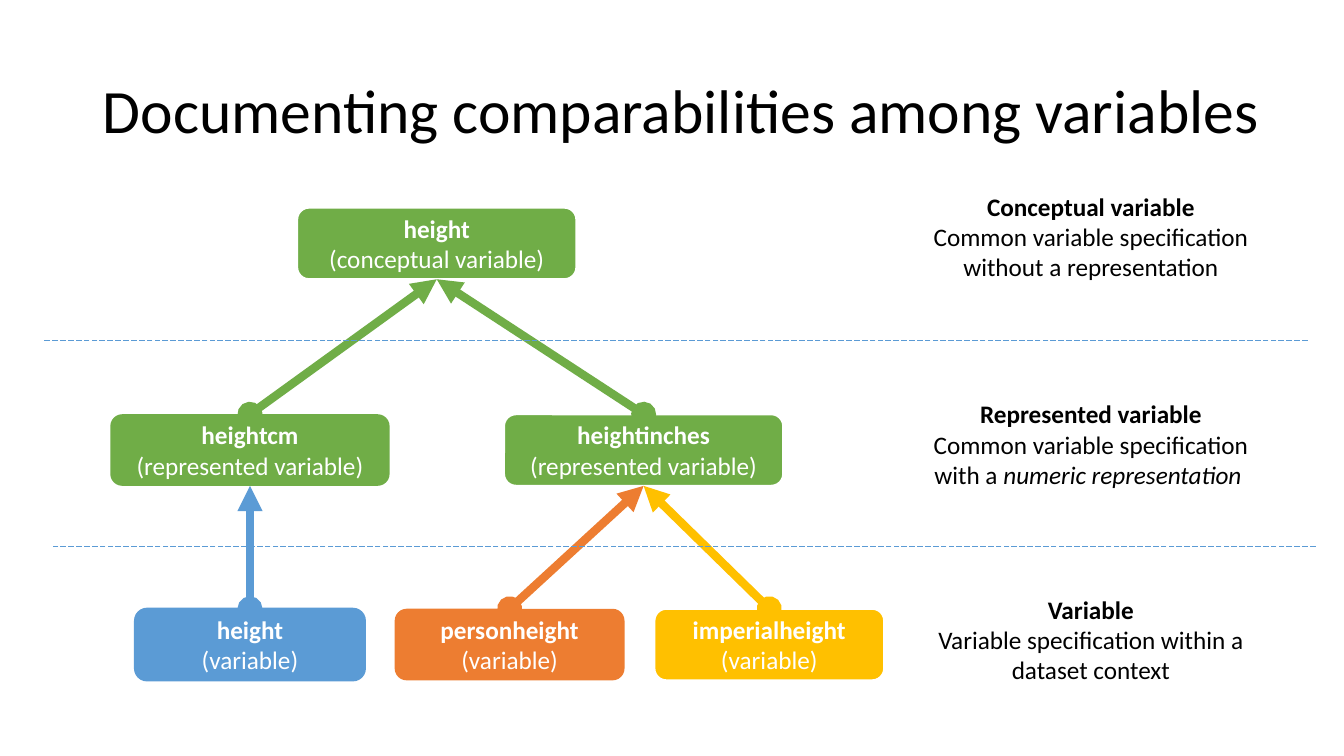
from lxml import etree
from pptx import Presentation
from pptx.dml.color import RGBColor
from pptx.enum.dml import MSO_LINE
from pptx.enum.shapes import MSO_CONNECTOR, MSO_SHAPE
from pptx.enum.text import MSO_ANCHOR, PP_ALIGN
from pptx.oxml.ns import qn
from pptx.util import Inches, Pt

STRAIGHT = MSO_CONNECTOR.STRAIGHT
ROUNDED = MSO_SHAPE.ROUNDED_RECTANGLE
LONG_DASH = MSO_LINE.LONG_DASH
MIDDLE = MSO_ANCHOR.MIDDLE
LEFT, CENTER = PP_ALIGN.LEFT, PP_ALIGN.CENTER

GREEN, BLUE, ORANGE, YELLOW = "70AD47", "5B9BD5", "ED7D31", "FFC000"
WHITE, BLACK = "FFFFFF", "000000"
BOX_HEIGHT = 9.47
WIDE, NARROW = 20.78, 17.1
CONCEPT_TOP, REPRESENTED_TOP, VARIABLE_TOP = 27.47, 54.8, 80.53
FIRST_CENTER, VARIABLE_STEP = 18.6, 19.32


def rgb(code):
    return RGBColor.from_string(code)


class VariableDiagram:
    """Draws on one slide, with lengths in hundredths of the slide's size."""

    font = "Calibri"
    text_size = 18
    title_size = 44

    def __init__(self, deck):
        self.deck = deck
        self.slide = deck.slides.add_slide(deck.slide_layouts[5])

    def x(self, share):
        return round(self.deck.slide_width * share / 100)

    def y(self, share):
        return round(self.deck.slide_height * share / 100)

    def area(self, left, top, width, height):
        return self.x(left), self.y(top), self.x(width), self.y(height)

    def add_run(self, paragraph, words, color, size, bold=False, italic=False):
        run = paragraph.add_run()
        run.text = words
        run.font.name = self.font
        run.font.size = Pt(size)
        run.font.bold = bold
        run.font.italic = italic
        run.font.color.rgb = rgb(color)

    def title(self, words, left, top, width, height):
        heading = self.slide.shapes.title
        heading.left, heading.top, heading.width, heading.height = self.area(left, top, width, height)
        frame = heading.text_frame
        frame.word_wrap = True
        frame.vertical_anchor = MIDDLE
        paragraph = frame.paragraphs[0]
        paragraph.alignment = LEFT
        paragraph.line_spacing = 0.9
        self.add_run(paragraph, words, BLACK, self.title_size)

    def box(self, name, role, center, top, width, color, outline=None):
        """Draws a variable and returns its top and bottom anchor points."""
        node = self.slide.shapes.add_shape(
            ROUNDED, *self.area(center - width / 2, top, width, BOX_HEIGHT))
        node.shadow.inherit = False
        node.fill.solid()
        node.fill.fore_color.rgb = rgb(color)
        if outline:
            node.line.color.rgb = rgb(outline)
            node.line.width = Pt(1.5)
        else:
            node.line.fill.background()
        frame = node.text_frame
        frame.word_wrap = True
        frame.vertical_anchor = MIDDLE
        paragraph = frame.paragraphs[0]
        paragraph.alignment = CENTER
        self.add_run(paragraph, name, WHITE, self.text_size, bold=True)
        paragraph.add_line_break()
        self.add_run(paragraph, f"({role})", WHITE, self.text_size)
        return (center, top), (center, top + BOX_HEIGHT)

    def line(self, start, end, color, width):
        link = self.slide.shapes.add_connector(
            STRAIGHT, self.x(start[0]), self.y(start[1]), self.x(end[0]), self.y(end[1]))
        link.line.color.rgb = rgb(color)
        link.line.width = Pt(width)
        etree.SubElement(link._element.spPr, qn("a:effectLst"))
        return link

    def arrow(self, start, end, color):
        link = self.line(start, end, color, 6)
        stroke = link._element.spPr.find(qn("a:ln"))
        for tag, kind in (("a:headEnd", "oval"), ("a:tailEnd", "triangle")):
            etree.SubElement(stroke, qn(tag)).set("type", kind)

    def divider(self, left, right, height):
        self.line((right, height), (left, height), BLUE, 0.5).line.dash_style = LONG_DASH

    def caption(self, term, meaning, top, emphasis=""):
        note = self.slide.shapes.add_textbox(*self.area(68.19, top, 25.96, 16.13))
        frame = note.text_frame
        frame.word_wrap = True
        frame.vertical_anchor = MIDDLE
        heading, explanation = frame.paragraphs[0], frame.add_paragraph()
        heading.alignment = explanation.alignment = CENTER
        self.add_run(heading, term, BLACK, self.text_size, bold=True)
        self.add_run(explanation, meaning, BLACK, self.text_size)
        if emphasis:
            self.add_run(explanation, emphasis, BLACK, self.text_size, italic=True)


def main():
    deck = Presentation()
    deck.slide_width, deck.slide_height = Inches(13.33), Inches(7.5)
    diagram = VariableDiagram(deck)
    diagram.title("Documenting comparabilities among variables", 6.9, 5.33, 88.9, 19.33)

    _, concept_bottom = diagram.box(
        "height", "conceptual variable", 32.5, CONCEPT_TOP, WIDE, GREEN, WHITE)

    represented_bottoms = {}
    for name, center, outline in (("heightcm", FIRST_CENTER, None),
                                  ("heightinches", 47.89, WHITE)):
        top, represented_bottoms[name] = diagram.box(
            name, "represented variable", center, REPRESENTED_TOP, WIDE, GREEN, outline)
        diagram.arrow(top, concept_bottom, GREEN)

    variables = (
        ("height", "heightcm", BLUE, BLUE),
        ("personheight", "heightinches", ORANGE, None),
        ("imperialheight", "heightinches", YELLOW, WHITE),
    )
    for column, (name, target, color, outline) in enumerate(variables):
        center = FIRST_CENTER + column * VARIABLE_STEP
        top, _ = diagram.box(name, "variable", center, VARIABLE_TOP, NARROW, color, outline)
        diagram.arrow(top, represented_bottoms[target], color)

    diagram.divider(3.23, 97.3, 45.07)
    diagram.divider(3.83, 97.9, 72.27)

    diagram.caption("Conceptual variable",
                    "Common variable specification without a representation", 23.2)
    diagram.caption("Represented variable", "Common variable specification with a ",
                    50.67, "numeric representation ")
    diagram.caption("Variable", "Variable specification within a dataset context", 76.53)
    deck.save("out.pptx")


if __name__ == "__main__":
    main()
